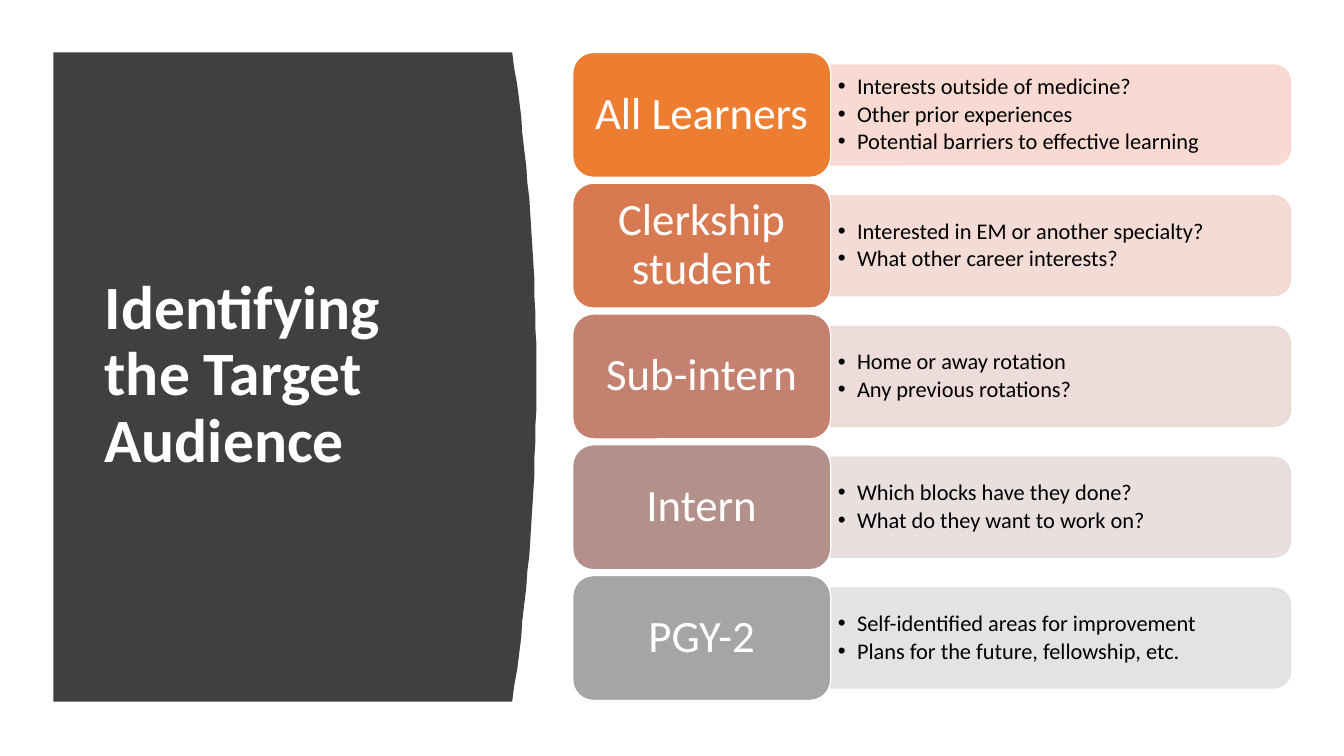
from lxml import etree
from pptx import Presentation
from pptx.dml.color import RGBColor
from pptx.enum.shapes import MSO_SHAPE
from pptx.enum.text import MSO_ANCHOR, PP_ALIGN
from pptx.oxml.ns import qn
from pptx.util import Emu, Pt

ROUNDED = MSO_SHAPE.ROUNDED_RECTANGLE
TOP_ROUNDED = MSO_SHAPE.ROUND_2_SAME_RECTANGLE
MIDDLE = MSO_ANCHOR.MIDDLE
LEFT, CENTER = PP_ALIGN.LEFT, PP_ALIGN.CENTER

# Content: label, label colour, bar colour, questions
TITLE = "Identifying the Target Audience"
LEARNERS = [
    ("All Learners", "ED7D31", "F8D7CE",
     ["Interests outside of medicine?", "Other prior experiences",
      "Potential barriers to effective learning"]),
    ("Clerkship student", "D87A51", "F2D8D2",
     ["Interested in EM or another specialty?", "What other career interests?"]),
    ("Sub-intern", "C48170", "EDD9D7",
     ["Home or away rotation", "Any previous rotations?"]),
    ("Intern", "B4908B", "E7DCDC",
     ["Which blocks have they done?", "What do they want to work on?"]),
    ("PGY-2", "A5A5A5", "E1E1E1",
     ["Self-identified areas for improvement",
      "Plans for the future, fellowship, etc."]),
]

# Layout in px, 100 to the inch
SCALE = 9144
FONT = "Calibri"
PANEL_LEFT, PANEL_TOP, PANEL_BOTTOM = 53, 52, 696
PANEL_EDGE, PANEL_BULGE, CURVE_STEPS = 508, 24, 40
ROWS_TOP, ROWS_BOTTOM = 52, 695
LABEL_LEFT, LABEL_WIDTH, LABEL_HEIGHT = 568, 256, 124
BAR_LEFT, BAR_WIDTH, BAR_HEIGHT = 824, 456, 99
QUESTIONS_WIDTH, QUESTIONS_HEIGHT = 451, 89
BULLET_INDENT = 19


def px(value):
    return Emu(round(value * SCALE))


def color(code):
    return RGBColor.from_string(code)


def paint(shape, fill, line=None):
    shape.shadow.inherit = False
    shape.fill.solid()
    shape.fill.fore_color.rgb = color(fill)
    if line:
        shape.line.color.rgb = color(line)
        shape.line.width = Pt(1)
    else:
        shape.line.fill.background()


def make_translucent(shape, percent):
    for code in shape._element.spPr.iter(qn("a:srgbClr")):
        etree.SubElement(code, qn("a:alpha"), val=str(percent * 1000))


def add_bullet(para):
    properties = para._p.get_or_add_pPr()
    properties.set("marL", str(px(BULLET_INDENT)))
    properties.set("indent", str(-px(BULLET_INDENT)))
    etree.SubElement(properties, qn("a:buFont"), typeface="Arial")
    etree.SubElement(properties, qn("a:buChar"), char="•")


def write(shape, lines, size, ink, bold=False, align=LEFT, insets=(10, 5),
          bullets=False, gap=0):
    frame = shape.text_frame
    frame.word_wrap = True
    frame.vertical_anchor = MIDDLE
    frame.margin_left = frame.margin_right = px(insets[0])
    frame.margin_top = frame.margin_bottom = px(insets[1])
    for index, line in enumerate(lines):
        para = frame.add_paragraph() if index else frame.paragraphs[0]
        para.alignment = align
        para.line_spacing = 0.9
        para.space_after = Pt(gap)
        if bullets:
            add_bullet(para)
        span = para.add_run()
        span.text = line
        span.font.name = FONT
        span.font.size = Pt(size)
        span.font.bold = bold
        span.font.color.rgb = color(ink)


def add_title_panel(page):
    middle = (PANEL_TOP + PANEL_BOTTOM) / 2
    half = (PANEL_BOTTOM - PANEL_TOP) / 2
    # The right edge is a parabola that bulges most at mid-height
    curve = []
    for step in range(CURVE_STEPS + 1):
        t = 2 * step / CURVE_STEPS - 1
        curve.append((PANEL_EDGE + PANEL_BULGE * (1 - t * t), middle + half * t))
    outline = page.shapes.build_freeform(PANEL_LEFT, PANEL_TOP, scale=SCALE)
    outline.add_line_segments(curve + [(PANEL_LEFT, PANEL_BOTTOM)], close=True)
    paint(outline.convert_to_shape(), "404040")
    box = page.shapes.add_textbox(px(94), px(111), px(374), px(524))
    write(box, [TITLE], 44, "FFFFFF", bold=True)


def add_learner_row(page, top, label, label_fill, bar_fill, questions):
    middle = top + LABEL_HEIGHT / 2
    # The bar is an upright shape turned so its round corners face right
    bar = page.shapes.add_shape(
        TOP_ROUNDED, px(BAR_LEFT + (BAR_WIDTH - BAR_HEIGHT) / 2),
        px(middle - BAR_WIDTH / 2), px(BAR_HEIGHT), px(BAR_WIDTH))
    bar.rotation = 90
    paint(bar, bar_fill, bar_fill)
    make_translucent(bar, 90)

    box = page.shapes.add_textbox(
        px(BAR_LEFT), px(middle - QUESTIONS_HEIGHT / 2),
        px(QUESTIONS_WIDTH), px(QUESTIONS_HEIGHT))
    write(box, questions, 16, "000000", insets=(7, 3), bullets=True, gap=2.4)

    tile = page.shapes.add_shape(
        ROUNDED, px(LABEL_LEFT), px(top), px(LABEL_WIDTH), px(LABEL_HEIGHT))
    paint(tile, label_fill, "FFFFFF")
    write(tile, [label], 32, "FFFFFF", align=CENTER, insets=(13, 7))


def main():
    deck = Presentation()
    deck.slide_width, deck.slide_height = px(1333), px(750)
    page = deck.slides.add_slide(deck.slide_layouts[6])
    add_title_panel(page)
    pitch = (ROWS_BOTTOM - ROWS_TOP - LABEL_HEIGHT) / (len(LEARNERS) - 1)
    for index, learner in enumerate(LEARNERS):
        add_learner_row(page, ROWS_TOP + index * pitch, *learner)
    deck.save("out.pptx")


if __name__ == "__main__":
    main()
